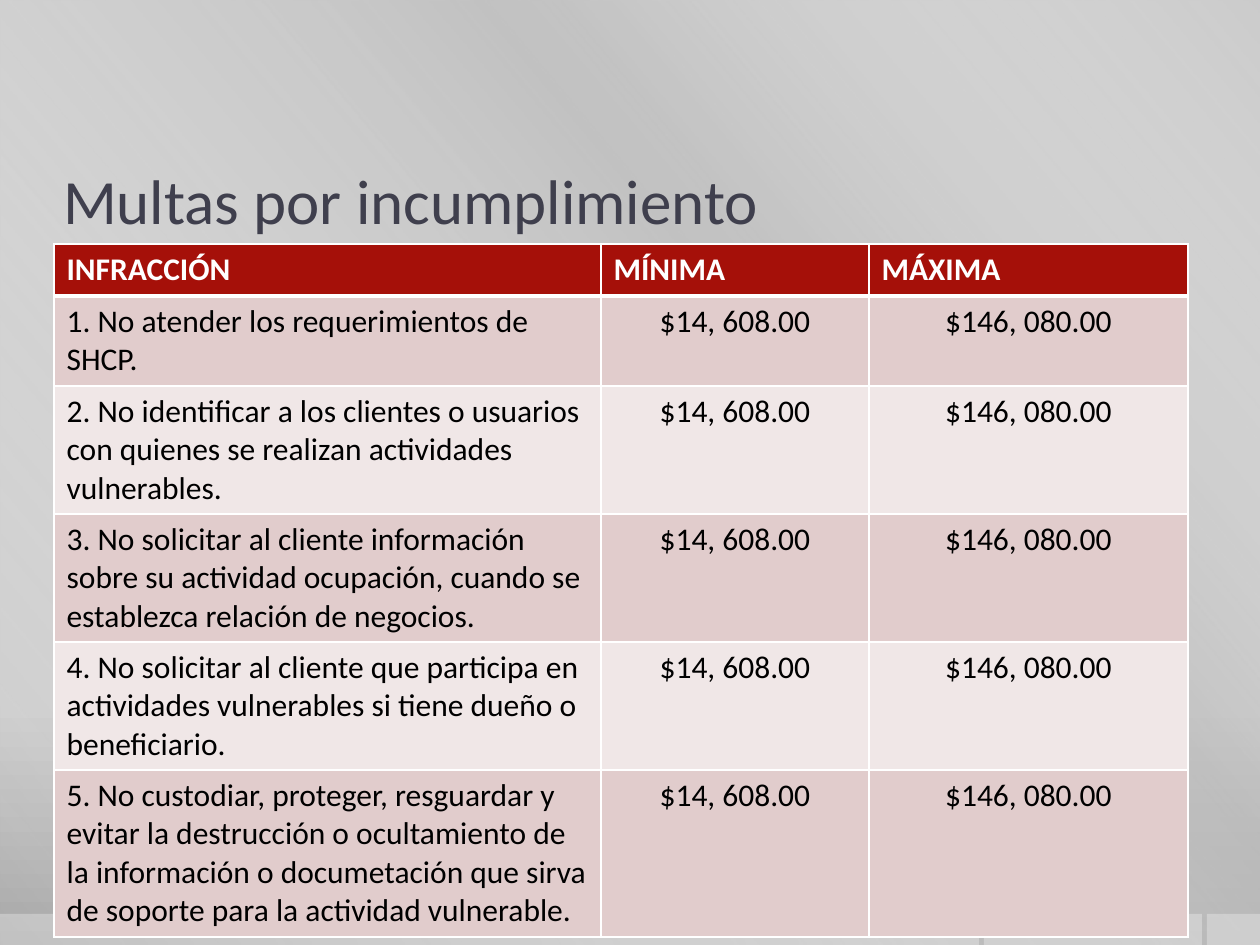
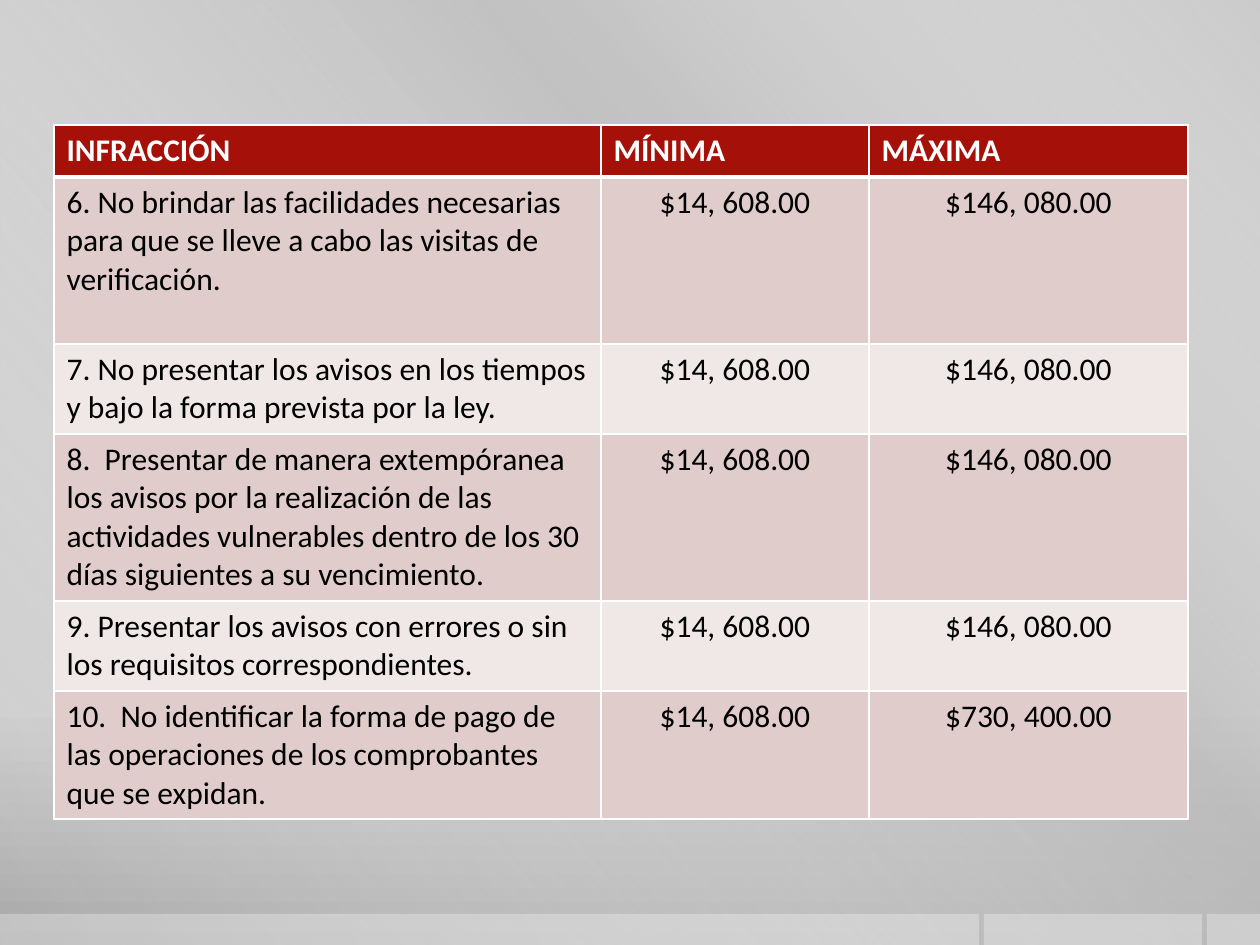
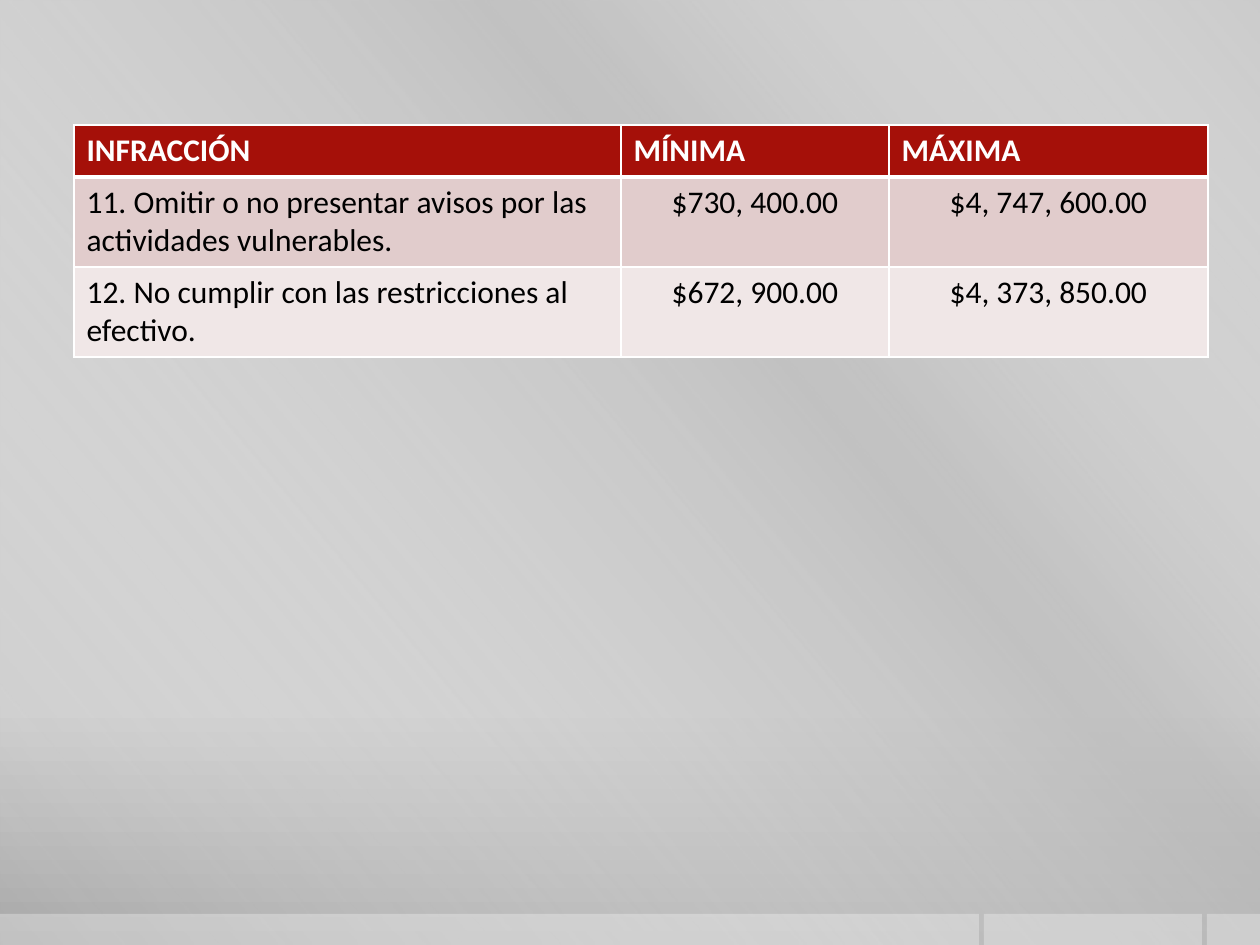
"""Build three slides that list the fines for non-compliance."""
import pptx
import pptx.dml.color
import pptx.enum.shapes
import pptx.enum.text
import pptx.oxml
import pptx.oxml.ns
import pptx.util

RGB = pptx.dml.color.RGBColor
ALIGN = pptx.enum.text.PP_ALIGN

WHITE = RGB(0xFF, 0xFF, 0xFF)
BLACK = RGB(0x00, 0x00, 0x00)
INK = RGB(0x3F, 0x3F, 0x4D)
RED = RGB(0xA5, 0x10, 0x09)
ROSE = RGB(0xE1, 0xCC, 0xCC)
PALE = RGB(0xF0, 0xE7, 0xE7)
GRAY = RGB(0xBF, 0xBF, 0xBF)
LIGHT = RGB(0xCB, 0xCB, 0xCB)
MIDDLE = RGB(0xC8, 0xC8, 0xC8)
DARK = RGB(0xA7, 0xA7, 0xA7)

FONT = "Calibri"
WIDTH, HEIGHT = 1260, 945
BACKDROP = [(0, LIGHT, 100), (76, MIDDLE, 100), (100, DARK, 100)]
SHEEN = [(0, WHITE, 0), (34, GRAY, 61), (38, GRAY, 76), (100, WHITE, 0)]
BANDS = [(0, 979), (984, 218), (1207, 53)]
BAND_TOP = 914

TITLE_BOX = (63, 136, 1134, 126)
COLUMNS = (547, 268, 319)
HEADER = ("INFRACCIÓN", "MÍNIMA", "MÁXIMA")
LOW, HIGH, HIGHER = "$14, 608.00", "$146, 080.00", "$730, 400.00"

SLIDES = [
    {"title": "Multas por incumplimiento", "at": (54, 244), "rows": [
        (2, "1. No atender los requerimientos de SHCP.", LOW, HIGH),
        (3, "2. No identificar a los clientes o usuarios con quienes se realizan "
            "actividades vulnerables.", LOW, HIGH),
        (3, "3. No solicitar al cliente información sobre su actividad ocupación, "
            "cuando se establezca relación de negocios.", LOW, HIGH),
        (3, "4. No solicitar al cliente que participa en actividades vulnerables "
            "si tiene dueño o beneficiario.", LOW, HIGH),
        (4, "5. No custodiar, proteger, resguardar y evitar la destrucción o "
            "ocultamiento de la información o documetación que sirva de soporte "
            "para la actividad vulnerable.", LOW, HIGH),
    ]},
    {"title": None, "at": (54, 125), "rows": [
        (4, "6. No brindar las facilidades necesarias para que se lleve a cabo las "
            "visitas de verificación.", LOW, HIGH),
        (2, "7. No presentar los avisos en los tiempos y bajo la forma prevista "
            "por la ley.", LOW, HIGH),
        (4, "8.  Presentar de manera extempóranea los avisos por la realización de "
            "las actividades vulnerables dentro de los 30 días siguientes a su "
            "vencimiento.", LOW, HIGH),
        (2, "9. Presentar los avisos con errores o sin los requisitos "
            "correspondientes.", LOW, HIGH),
        (3, "10.  No identificar la forma de pago de las operaciones de los "
            "comprobantes que se expidan.", LOW, HIGHER),
    ]},
    {"title": None, "at": (74, 125), "rows": [
        (2, "11. Omitir o no presentar avisos por las actividades vulnerables.",
            HIGHER, "$4, 747, 600.00"),
        (2, "12. No cumplir con las restricciones al efectivo.",
            "$672, 900.00", "$4, 373, 850.00"),
    ]},
]


def px(n):
    return pptx.util.Emu(round(n * 914400 / 126))


def row_height(lines):
    return round(38.5 * lines + 13)


def xml(tag, attrs, body):
    ns = pptx.oxml.ns.nsdecls("a")
    return pptx.oxml.parse_xml(f"<a:{tag} {ns} {attrs}>{body}</a:{tag}>")


def color_xml(color, alpha):
    return f'<a:srgbClr val="{color}"><a:alpha val="{alpha * 1000}"/></a:srgbClr>'


def gradient(stops, angle):
    body = "".join(f'<a:gs pos="{pos * 1000}">{color_xml(color, alpha)}</a:gs>'
                   for pos, color, alpha in stops)
    return xml("gradFill", 'rotWithShape="1"',
               f'<a:gsLst>{body}</a:gsLst><a:lin ang="{angle * 60000}" scaled="0"/>')


def replace_fill(parent, fill):
    parent.replace(parent.find(pptx.oxml.ns.qn("a:solidFill")), fill)


def write(tf, text, size=18, color=BLACK, bold=False, align=ALIGN.LEFT):
    p = tf.paragraphs[0]
    p.alignment = align
    r = p.add_run()
    r.text = text
    r.font.name = FONT
    r.font.size = pptx.util.Pt(size)
    r.font.bold = bold
    r.font.color.rgb = color


def add_panel(slide, box, fill):
    sp = slide.shapes.add_shape(pptx.enum.shapes.MSO_SHAPE.RECTANGLE, *map(px, box))
    sp.shadow.inherit = False
    sp.line.fill.background()
    sp.fill.solid()
    replace_fill(sp.element.spPr, fill)
    return sp


def style_master(master, slide):
    master.background.fill.solid()
    bg = master.element.find(".//" + pptx.oxml.ns.qn("p:bgPr"))
    replace_fill(bg, gradient(BACKDROP, 90))
    panels = [add_panel(slide, (0, 0, WIDTH, HEIGHT), gradient(SHEEN, 140))]
    for left, width in BANDS:
        box = (left, BAND_TOP, width, HEIGHT - BAND_TOP)
        panels.append(add_panel(slide, box, xml("solidFill", "", color_xml(WHITE, 30))))
    tree = master.shapes.element if hasattr(master.shapes, "element") else master.element.cSld.spTree
    for i, sp in enumerate(panels):
        tree.insert(2 + i, sp.element)


def set_borders(cell, top, bottom):
    tcPr = cell._tc.get_or_add_tcPr()
    for i, (side, width) in enumerate((("L", 1), ("R", 1), ("T", top), ("B", bottom))):
        tcPr.insert(i, xml(f"ln{side}", f'w="{pptx.util.Pt(width)}"',
                           f'<a:solidFill>{color_xml(WHITE, 100)}</a:solidFill>'))


def add_title(slide, text):
    sp = slide.shapes.title
    sp.left, sp.top, sp.width, sp.height = map(px, TITLE_BOX)
    tf = sp.text_frame
    tf.margin_left = tf.margin_right = 0
    tf.auto_size = pptx.enum.text.MSO_AUTO_SIZE.NONE
    tf.vertical_anchor = pptx.enum.text.MSO_ANCHOR.MIDDLE
    write(tf, text, size=36, color=INK)


def add_fines(slide, at, rows):
    lines = [(1, *HEADER)] + rows
    heights = [row_height(row[0]) for row in lines]
    box = (*at, sum(COLUMNS), sum(heights))
    table = slide.shapes.add_table(len(lines), len(COLUMNS), *map(px, box)).table
    for col, width in zip(table.columns, COLUMNS):
        col.width = px(width)
    for i, (_, *texts) in enumerate(lines):
        table.rows[i].height = px(heights[i])
        head = i == 0
        for j, text in enumerate(texts):
            cell = table.cell(i, j)
            cell.fill.solid()
            cell.fill.fore_color.rgb = RED if head else (PALE, ROSE)[i % 2]
            set_borders(cell, top=3 if i == 1 else 1, bottom=3 if head else 1)
            write(cell.text_frame, text, color=WHITE if head else BLACK, bold=head,
                  align=ALIGN.LEFT if head or j == 0 else ALIGN.CENTER)


def main():
    prs = pptx.Presentation()
    prs.slide_width, prs.slide_height = px(WIDTH), px(HEIGHT)
    title_only, blank = prs.slide_layouts[5], prs.slide_layouts[6]
    for i, content in enumerate(SLIDES):
        slide = prs.slides.add_slide(title_only if content["title"] else blank)
        if i == 0:
            style_master(prs.slide_master, slide)
        if content["title"]:
            add_title(slide, content["title"])
        add_fines(slide, content["at"], content["rows"])
    prs.save("out.pptx")


if __name__ == "__main__":
    main()
